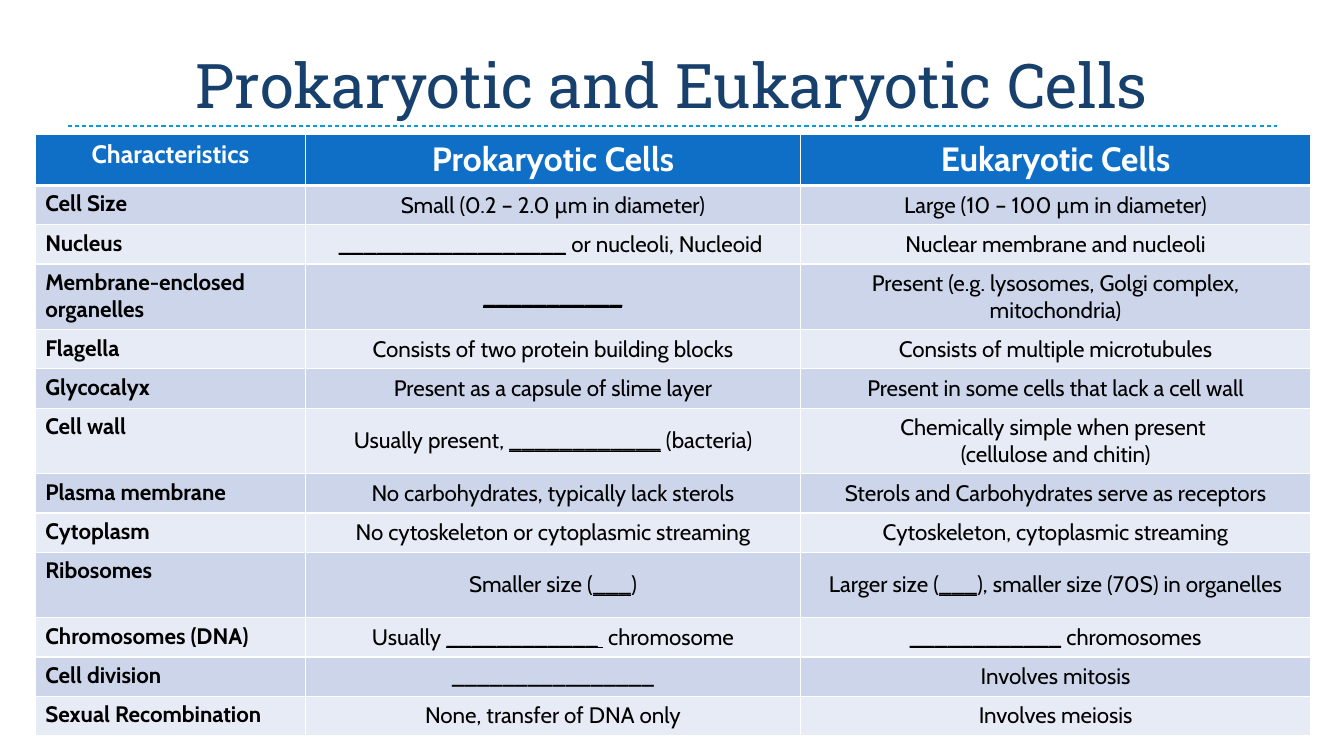
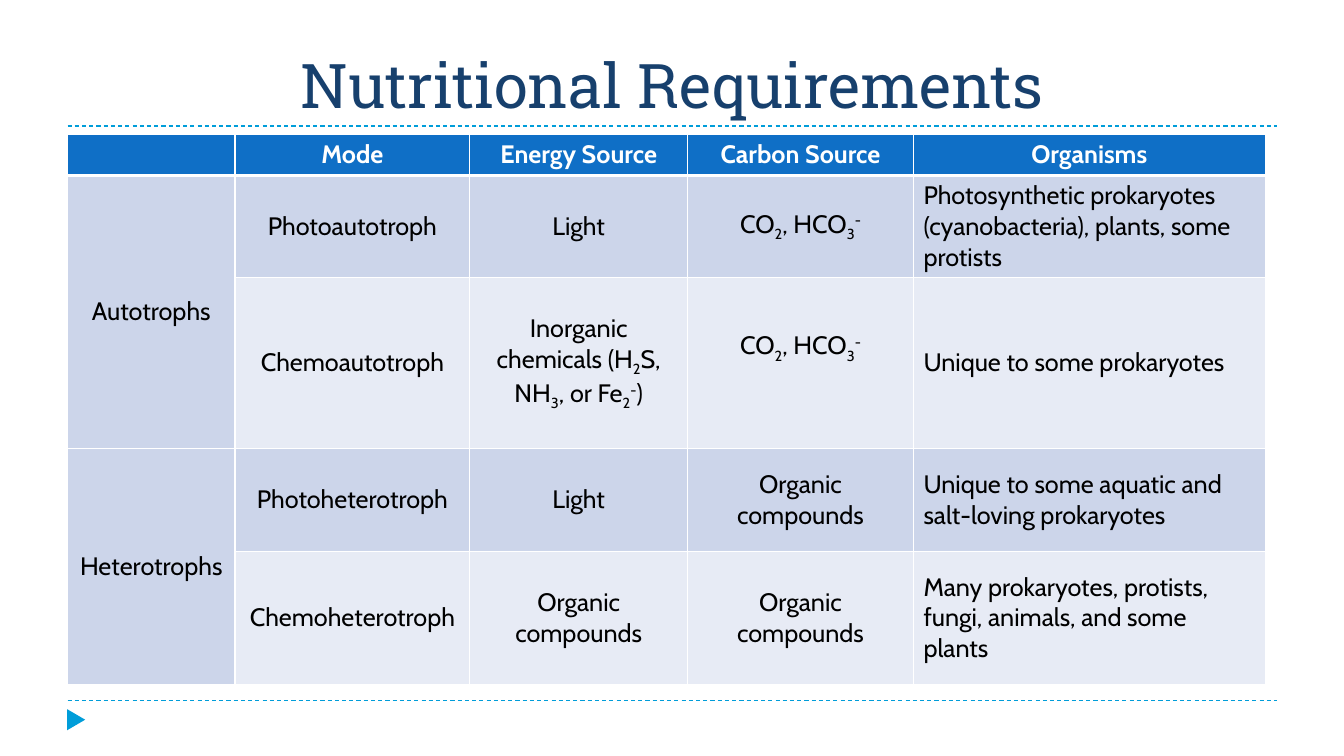
from dataclasses import dataclass, field
from typing import Any, NamedTuple, Union

from lxml.etree import SubElement
from pptx import Presentation
from pptx.dml.color import RGBColor
from pptx.enum.dml import MSO_LINE
from pptx.enum.shapes import MSO_CONNECTOR, MSO_SHAPE
from pptx.enum.text import MSO_ANCHOR, PP_ALIGN
from pptx.oxml.ns import qn
from pptx.util import Inches, Pt


@dataclass(frozen=True)
class Theme:
    title: str = "17406D"
    line: str = "009DD9"
    head: str = "0F6FC6"
    bands: tuple[str, str] = ("E7EBF5", "CCD5EA")
    white: str = "FFFFFF"
    black: str = "000000"
    slab: str = "Roboto Slab"
    sans: str = "Cabin"
    large: int = 44
    lead: int = 24
    mid: int = 18
    small: int = 16


THEME = Theme()


class Bit(NamedTuple):
    text: str
    under: bool = False
    base: int = 0


Cell = Union[str, tuple[Bit, ...]]


class Look(NamedTuple):
    align: PP_ALIGN = PP_ALIGN.CENTER
    anchor: MSO_ANCHOR = MSO_ANCHOR.MIDDLE
    bold: bool = False


@dataclass(frozen=True)
class Grid:
    left: float
    cols: tuple[float, ...]
    rows: tuple[float, ...]
    heads: tuple[int, ...]
    size: int
    looks: tuple[Look, ...]
    cells: tuple[tuple[Cell, ...], ...]
    spans: tuple[tuple[int, int], ...] = ()
    pads: dict[tuple[int, int], float] = field(default_factory=dict)


@dataclass(frozen=True)
class Page:
    title: str
    grid: Grid


def low(text: str) -> Bit:
    return Bit(text, base=-25000)


def high(text: str) -> Bit:
    return Bit(text, base=30000)


def blank(count: int, tail: str = "") -> Bit:
    return Bit("_" * count + tail, under=True)


def apply(item: Any, form: dict[str, Any]) -> None:
    for name, value in form.items():
        setattr(item, name, value)


def style(font: Any, face: str, size: int, tint: str, **more: Any) -> None:
    apply(font, {"name": face, "size": Pt(size), **more})
    font.color.rgb = RGBColor.from_string(tint)


def rule(slide: Any, top: float) -> None:
    line = slide.shapes.add_connector(
        MSO_CONNECTOR.STRAIGHT, Inches(0.67), Inches(top), Inches(12.67), Inches(top))
    line.line.color.rgb = RGBColor.from_string(THEME.line)
    apply(line.line, {"width": Pt(0.75), "dash_style": MSO_LINE.DASH})
    SubElement(line._element.spPr, qn("a:effectLst"))


def mark(slide: Any) -> None:
    shape = slide.shapes.add_shape(
        MSO_SHAPE.ISOSCELES_TRIANGLE, Inches(0.65), Inches(7.05), Inches(0.21), Inches(0.18))
    shape.rotation = 90
    shape.shadow.inherit = False
    shape.fill.solid()
    shape.fill.fore_color.rgb = RGBColor.from_string(THEME.line)
    shape.line.fill.background()


def title(slide: Any, text: str) -> None:
    frame = slide.shapes.add_textbox(
        Inches(0.67), Inches(0.17), Inches(12), Inches(1.08)).text_frame
    apply(frame, {"word_wrap": True, "vertical_anchor": MSO_ANCHOR.BOTTOM})
    para = frame.paragraphs[0]
    para.alignment = PP_ALIGN.CENTER
    run = para.add_run()
    run.text = text
    style(run.font, THEME.slab, THEME.large, THEME.title)


def edge(cell: Any, row: int) -> None:
    props = cell._tc.get_or_add_tcPr()
    thick = {"lnT": 3 if row == 1 else 1, "lnB": 1 if row else 3}
    for side in ("lnL", "lnR", "lnT", "lnB"):
        line = SubElement(props, qn(f"a:{side}"), w=str(Pt(thick.get(side, 1))))
        fill = SubElement(line, qn("a:solidFill"))
        SubElement(fill, qn("a:srgbClr"), val=THEME.white)


def write(cell: Any, text: Cell, look: Look, size: int, tint: str) -> None:
    cell.vertical_anchor = look.anchor
    lines = [(Bit(part),) for part in text.split("\n")] if isinstance(text, str) else [text]
    for num, bits in enumerate(lines):
        para = cell.text_frame.add_paragraph() if num else cell.text_frame.paragraphs[0]
        para.alignment = look.align
        for bit in bits:
            if not bit.text:
                continue
            run = para.add_run()
            run.text = bit.text
            style(run.font, THEME.sans, size, tint, bold=look.bold, underline=bit.under)
            if bit.base:
                run._r.get_or_add_rPr().set("baseline", str(bit.base))


def table(slide: Any, grid: Grid) -> None:
    chart = slide.shapes.add_table(
        len(grid.rows), len(grid.cols), Inches(grid.left), Inches(1.33),
        Inches(sum(grid.cols)), Inches(sum(grid.rows))).table
    for col, width in zip(chart.columns, grid.cols):
        col.width = Inches(width)
    for row, height in zip(chart.rows, grid.rows):
        row.height = Inches(height)
    top = Look(anchor=MSO_ANCHOR.TOP, bold=True)
    for y, texts in enumerate(grid.cells):
        for x, text in enumerate(texts):
            cell = chart.cell(y, x)
            edge(cell, y)
            cell.fill.solid()
            tint = THEME.bands[y % 2] if y else THEME.head
            cell.fill.fore_color.rgb = RGBColor.from_string(tint)
            if y:
                write(cell, text, grid.looks[x], grid.size, THEME.black)
            else:
                write(cell, text, top, grid.heads[x], THEME.white)
    for y, x in grid.spans:
        chart.cell(y, x).merge(chart.cell(y + 1, x))
    for (y, x), pad in grid.pads.items():
        chart.cell(y, x).margin_bottom = Inches(pad)


MID = Look()
SIDE = Look(PP_ALIGN.LEFT)
NAME = Look(PP_ALIGN.LEFT, MSO_ANCHOR.TOP, True)
SLIM, TALL = 0.39, 0.65
GAS = (Bit("CO"), low("2"), Bit(", HCO"), low("3"), high("-"))
FOOD = "Organic compounds"

CELLS = Grid(
    left=0.35,
    cols=(2.68, 4.91, 5.06),
    rows=(0.51, SLIM, SLIM, TALL, SLIM, SLIM, TALL, SLIM, SLIM, TALL, SLIM, SLIM, SLIM),
    heads=(THEME.mid, THEME.lead, THEME.lead),
    size=THEME.small,
    looks=(NAME, MID, MID),
    cells=(
        ("Characteristics", "Prokaryotic Cells", "Eukaryotic Cells"),
        ("Cell Size", "Small (0.2 – 2.0 µm in diameter)", "Large (10 – 100 µm in diameter)"),
        ("Nucleus", (blank(18), Bit(" or nucleoli, Nucleoid ")), "Nuclear membrane and nucleoli"),
        ("Membrane-enclosed organelles", (blank(11),),
         "Present (e.g. lysosomes, Golgi complex, mitochondria)"),
        ("Flagella", "Consists of two protein building blocks",
         "Consists of multiple microtubules"),
        ("Glycocalyx", "Present as a capsule of slime layer",
         "Present in some cells that lack a cell wall"),
        ("Cell wall", (Bit("Usually present, "), blank(12), Bit(" (bacteria)")),
         "Chemically simple when present \n(cellulose and chitin)"),
        ("Plasma membrane", "No carbohydrates, typically lack sterols",
         "Sterols and Carbohydrates serve as receptors"),
        ("Cytoplasm", "No cytoskeleton or cytoplasmic streaming",
         "Cytoskeleton, cytoplasmic streaming"),
        ("Ribosomes", (Bit("Smaller size ("), blank(3), Bit(")")),
         (Bit("Larger size ("), blank(3), Bit("), smaller size (70S) in organelles"))),
        ("Chromosomes (DNA)", (Bit("Usually "), blank(12, " "), Bit(" chromosome")),
         (blank(12), Bit(" chromosomes"))),
        ("Cell division", "_" * 16, "Involves mitosis"),
        ("Sexual Recombination", "None, transfer of DNA only", "Involves meiosis"),
    ),
)

NEEDS = Grid(
    left=0.67,
    cols=(1.66, 2.33, 2.16, 2.24, 3.49),
    rows=(0.41, 1.01, 1.7, 1.02, 1.32),
    heads=(THEME.mid,) * 5,
    size=THEME.mid,
    looks=(MID, MID, MID, MID, SIDE),
    cells=(
        ("", "Mode", "Energy Source", "Carbon Source", "Organisms"),
        ("Autotrophs", "Photoautotroph", "Light", GAS,
         "Photosynthetic prokaryotes (cyanobacteria), plants, some protists"),
        ("", "Chemoautotroph",
         (Bit("Inorganic chemicals (H"), low("2"), Bit("S, NH"), low("3"),
          Bit(", or Fe"), low("2"), high("-"), Bit(")")),
         GAS, "Unique to some prokaryotes"),
        ("Heterotrophs", "Photoheterotroph", "Light", FOOD,
         "Unique to some aquatic and salt-loving prokaryotes"),
        ("", "Chemoheterotroph", FOOD, FOOD,
         "Many prokaryotes, protists, fungi, animals, and some plants"),
    ),
    spans=((1, 0), (3, 0)),
    pads={(2, 3): 0.35},
)

PAGES = (
    Page("Prokaryotic and Eukaryotic Cells", CELLS),
    Page("Nutritional Requirements", NEEDS),
)


def main() -> None:
    deck = Presentation()
    apply(deck, {"slide_width": Inches(13.33), "slide_height": Inches(7.5)})
    for page in PAGES:
        slide = deck.slides.add_slide(deck.slide_layouts[6])
        for top in (6.95, 1.25):
            rule(slide, top)
        mark(slide)
        title(slide, page.title)
        table(slide, page.grid)
    deck.save("out.pptx")


if __name__ == "__main__":
    main()
